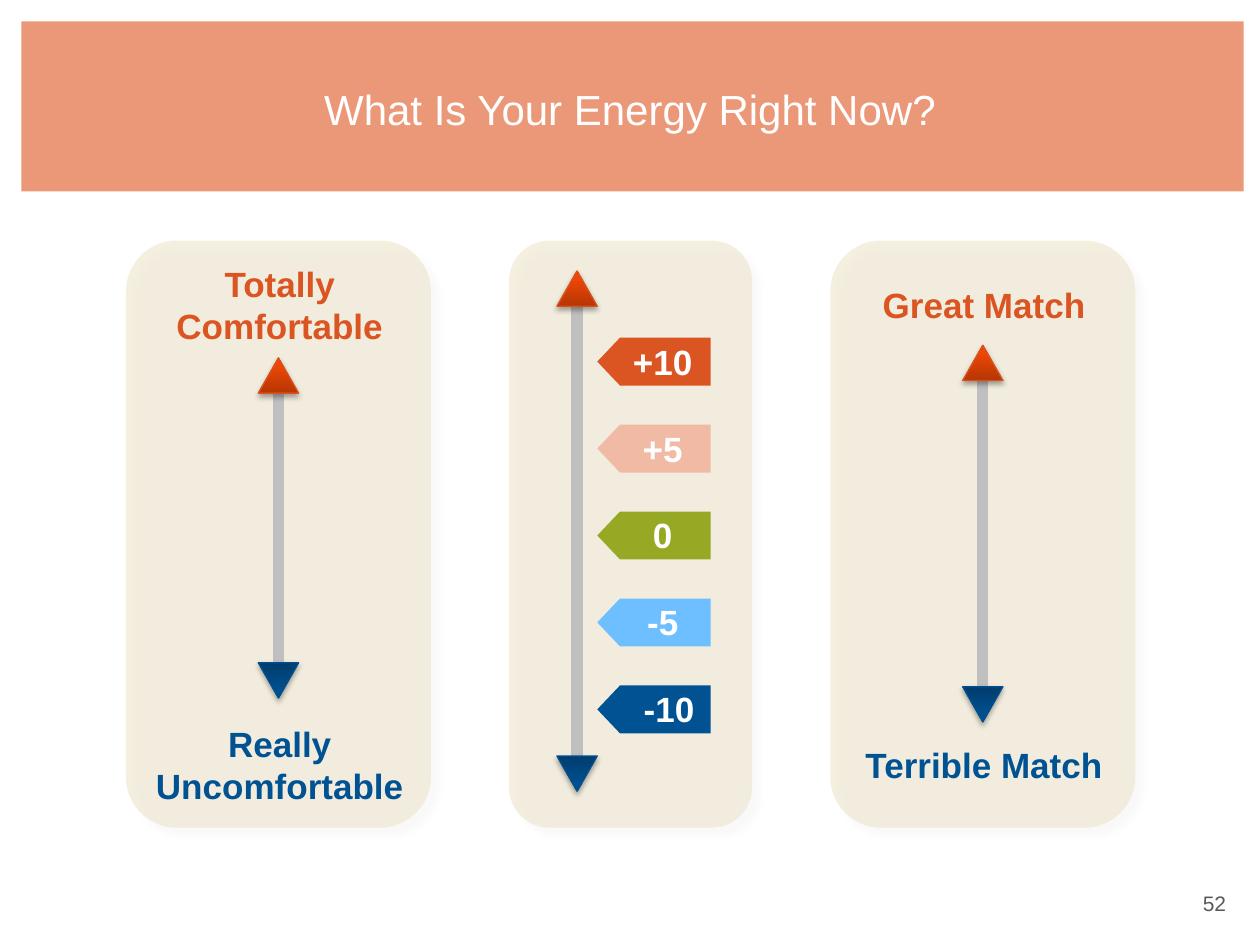
import lxml.etree
import pptx
import pptx.dml.color
import pptx.enum.shapes
import pptx.enum.text
import pptx.oxml
import pptx.oxml.ns
import pptx.util

COLORS = {
    "banner": "EB9878", "panel": "EDE4CA", "shaft": "BFBFBF", "white": "FFFFFF",
    "number": "595959", "high": "DA5521", "mid_high": "F1BAA5", "neutral": "97A825",
    "mid_low": "6EBFFF", "low": "005293", "high_edge": "DA511C", "low_edge": "005090",
}
HEAD_GRADIENTS = {
    "high": ((0, "B73604"), (80, "EE4705"), (100, "F44501")),
    "low": ((0, "003D6E"), (80, "004F8E"), (100, "00508F")),
}
PANEL_TOP, PANEL_HEIGHT, PANEL_GAP = 1.91, 4.66, 0.62
HEAD_WIDTH, HEAD_HEIGHT = 0.32, 0.28
SHAPES = pptx.enum.shapes.MSO_SHAPE
ALIGN = pptx.enum.text.PP_ALIGN
NAMESPACE = pptx.oxml.ns.nsdecls("a")


def rgb(name):
    return pptx.dml.color.RGBColor.from_string(COLORS[name])


def inches(*lengths):
    return [pptx.util.Inches(length) for length in lengths]


def add_shape(slide, kind, box, color):
    shape = slide.shapes.add_shape(kind, *inches(*box))
    shape.shadow.inherit = False
    shape.fill.solid()
    shape.fill.fore_color.rgb = rgb(color)
    shape.line.fill.background()
    return shape


def add_shadow(shape, alpha, blur, distance, angle):
    properties = shape.element.spPr
    properties.remove(properties.find(pptx.oxml.ns.qn("a:effectLst")))
    properties.append(pptx.oxml.parse_xml(
        f'<a:effectLst {NAMESPACE}><a:outerShdw blurRad="{pptx.util.Pt(blur)}" '
        f'dist="{pptx.util.Pt(distance)}" dir="{angle * 60000}" algn="ctr" rotWithShape="0">'
        f'<a:srgbClr val="000000"><a:alpha val="{alpha * 1000}"/></a:srgbClr>'
        '</a:outerShdw></a:effectLst>'))


def write_run(frame, text, size, color, align, bold=False):
    paragraph = frame.paragraphs[0]
    paragraph.alignment = align
    run = paragraph.add_run()
    run.text = text
    run.font.name = "Arial"
    run.font.size = pptx.util.Pt(size)
    run.font.bold = bold
    run.font.color.rgb = rgb(color)


def add_label(slide, text, center, middle, width, color, lines=1):
    height = 0.11 + 0.33 * lines
    box = (center - width / 2, middle - height / 2, width, height)
    frame = slide.shapes.add_textbox(*inches(*box)).text_frame
    frame.word_wrap = True
    frame.auto_size = pptx.enum.text.MSO_AUTO_SIZE.SHAPE_TO_FIT_TEXT
    write_run(frame, text, 20, color, ALIGN.CENTER, bold=True)


def add_head(slide, center, top, level):
    box = (center - HEAD_WIDTH / 2, top, HEAD_WIDTH, HEAD_HEIGHT)
    head = add_shape(slide, SHAPES.ISOSCELES_TRIANGLE, box, level)
    head.rotation = 180 if level == "low" else 0
    head.line.color.rgb = rgb(level + "_edge")
    head.line.width = pptx.util.Pt(0.75)
    stops = "".join(f'<a:gs pos="{position * 1000}"><a:srgbClr val="{color}"/></a:gs>'
                    for position, color in HEAD_GRADIENTS[level])
    properties = head.element.spPr
    properties.replace(properties.find(pptx.oxml.ns.qn("a:solidFill")), pptx.oxml.parse_xml(
        f'<a:gradFill {NAMESPACE} rotWithShape="1"><a:gsLst>{stops}</a:gsLst>'
        '<a:lin ang="16200000" scaled="0"/></a:gradFill>'))
    add_shadow(head, 35, 3.1, 1.8, 90)


def add_scale_arrow(slide, center, top, bottom):
    """Grey shaft with a red head above and a blue head below."""
    shaft = slide.shapes.add_connector(
        pptx.enum.shapes.MSO_CONNECTOR.STRAIGHT,
        *inches(center, top + HEAD_HEIGHT, center, bottom - HEAD_HEIGHT))
    shaft.line.color.rgb = rgb("shaft")
    shaft.line.width = pptx.util.Pt(6.5)
    lxml.etree.SubElement(shaft.element.spPr, pptx.oxml.ns.qn("a:effectLst"))
    add_head(slide, center, top, "high")
    add_head(slide, center, bottom - HEAD_HEIGHT, "low")


def add_panel(slide, box):
    panel = add_shape(slide, SHAPES.ROUNDED_RECTANGLE, box, "panel")
    color = panel.element.spPr.find(".//" + pptx.oxml.ns.qn("a:srgbClr"))
    lxml.etree.SubElement(color, pptx.oxml.ns.qn("a:alpha"), val="59000")
    add_shadow(panel, 3, 4, 6, 45)


def add_range_panel(slide, box, high_text, low_text, lines, arrow_top, arrow_bottom):
    """Panel with an arrow between two labels."""
    left, top, width, height = box
    center = left + width / 2
    add_panel(slide, box)
    add_scale_arrow(slide, center, top + arrow_top, top + arrow_bottom)
    add_label(slide, high_text, center + 0.01, top + 0.51, 2.08, "high", lines)
    add_label(slide, low_text, center + 0.01, top + height - 0.5, 2.27, "low", lines)


def add_score_panel(slide, box, scores):
    """Panel with an arrow and evenly spaced score tags."""
    left, top, width, height = box
    tag_center, tag_length, tag_height, tag_step = left + 1.15, 0.9, 0.38, 0.69
    add_panel(slide, box)
    add_scale_arrow(slide, left + 0.54, top + 0.24, top + height - 0.29)
    for index, (text, color, shift) in enumerate(scores):
        middle = top + 0.96 + index * tag_step
        # The tag is drawn upright and turned so that it points left
        tag_box = (tag_center - tag_height / 2, middle - tag_length / 2, tag_height, tag_length)
        tag = add_shape(slide, SHAPES.FLOWCHART_OFFPAGE_CONNECTOR, tag_box, color)
        tag.rotation = 90
        add_label(slide, text, tag_center + 0.07 + shift, middle, 0.76, "white")


def add_header(slide, box):
    left, top, width, height = box
    banner = add_shape(slide, SHAPES.RECTANGLE, box, "banner")
    title = slide.shapes.title
    # The banner lies behind the title
    title.element.addprevious(banner.element)
    title.left, title.top, title.width, title.height = inches(
        left + 0.33, top + 0.13, width - 0.7, height - 0.23)
    title.text_frame.vertical_anchor = pptx.enum.text.MSO_ANCHOR.MIDDLE
    write_run(title.text_frame, "What Is Your Energy Right Now?", 24, "white", ALIGN.CENTER)


def add_slide_number(slide, box):
    frame = slide.shapes.add_textbox(*inches(*box)).text_frame
    frame.word_wrap = True
    write_run(frame, "52", 12, "number", ALIGN.RIGHT)


def main():
    presentation = pptx.Presentation()
    presentation.slide_width, presentation.slide_height = inches(10, 7.5)
    slide = presentation.slides.add_slide(presentation.slide_layouts[5])
    add_header(slide, (0.17, 0.17, 9.7, 1.35))

    # Three panels in a row with equal gaps
    boxes, left = [], 1
    for width in (2.42, 1.93, 2.42):
        boxes.append((left, PANEL_TOP, width, PANEL_HEIGHT))
        left += width + PANEL_GAP
    add_range_panel(slide, boxes[0], "Totally Comfortable", "Really Uncomfortable", 2, 0.93, 3.63)
    add_score_panel(slide, boxes[1], (
        ("+10", "high", 0), ("+5", "mid_high", 0), ("0", "neutral", 0),
        ("-5", "mid_low", 0), ("-10", "low", 0.05)))
    add_range_panel(slide, boxes[2], "Great Match", "Terrible Match", 1, 0.83, 3.82)

    add_slide_number(slide, (7.5, 7.02, 2.33, 0.32))
    presentation.save("out.pptx")


if __name__ == "__main__":
    main()
